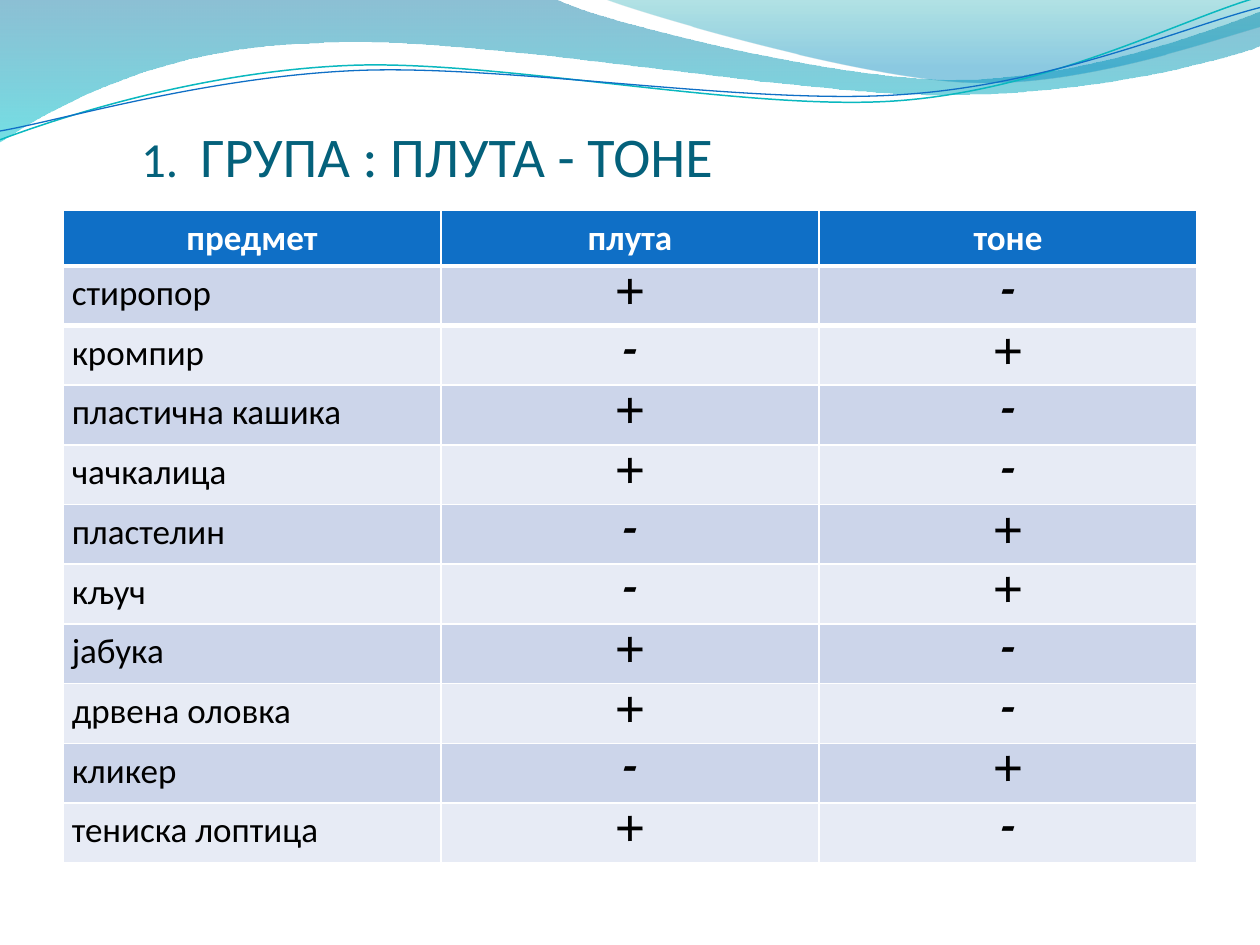
from lxml.etree import Element, SubElement
from pptx import Presentation
from pptx.dml.color import RGBColor
from pptx.enum.text import MSO_ANCHOR, PP_ALIGN
from pptx.oxml.ns import qn
from pptx.util import Inches, Pt

TITLE = [("1.  ", 28), ("ГРУПА : ПЛУТА - ТОНЕ", 32)]
HEAD = ["предмет", "плута", "тоне"]
ITEMS = [
    ("стиропор", "+", "-"),
    ("кромпир", "-", "+"),
    ("пластична кашика", "+", "-"),
    ("чачкалица", "+", "-"),
    ("пластелин", "-", "+"),
    ("кључ", "-", "+"),
    ("јабука", "+", "-"),
    ("дрвена оловка", "+", "-"),
    ("кликер", "-", "+"),
    ("тениска лоптица", "+", "-"),
]
BLUE, WHITE, BANDS = "0F6FC6", "FFFFFF", ("CCD5EA", "E7EBF5")
TOP, BODY = 0.44, 4.74
WAVES = [
    ([(0, 0), (4.4, -0.01), (4.76, 0.17, 6.64, 0.63, 7.58, 0.63),
      (8.53, 0.63, 9.58, 0.26, 10, 0.09), (10.01, 0.36),
      (9.83, 0.44, 8.7, 0.76, 7.46, 0.75), (6.22, 0.75, 3.82, 0.28, 2.57, 0.34),
      (1.29, 0.36, 0.46, 0.83, -0.01, 1.13)],
     [(0, "0074A1", 45), (1, "00C6CF", 55)]),
    ([(4.79, -0.01), (5.09, 0.11, 6.82, 0.62, 7.69, 0.65),
      (8.56, 0.69, 9.61, 0.32, 10, 0.21), (10, 0)],
     [(0, "00A1A9", 30), (0.8, "008BBF", 45)]),
]
LINES = [
    ([(0, 1.11), (0.48, 0.93, 1.58, 0.57, 2.77, 0.52),
      (3.95, 0.47, 5.93, 0.89, 7.13, 0.8), (8.33, 0.71, 9.38, 0.15, 9.98, -0.02)],
     "0AB8BF", 0.85),
    ([(0, 1.04), (0.47, 0.96, 1.64, 0.61, 2.83, 0.56),
      (4.03, 0.51, 5.97, 0.84, 7.17, 0.75), (8.36, 0.67, 9.41, 0.21, 10, 0.06)],
     BLUE, 0.75),
]


def color(code):
    return RGBColor.from_string(code)


def draw(slide, path, close):
    """Add an outline whose six-number parts are cubic curves."""
    ends = [(Inches(part[-2]), Inches(part[-1])) for part in path]
    pen = slide.shapes.build_freeform(*ends[0], scale=1.0)
    pen.add_line_segments(ends[1:], close=close)
    shape = pen.convert_to_shape()
    shape.shadow.inherit = False
    for node, part in zip(list(shape.element.iter(qn("a:lnTo"))), path[1:]):
        if len(part) == 6:
            node.tag = qn("a:cubicBezTo")
            for spot, i in enumerate((0, 2)):
                knot = Element(qn("a:pt"), x=str(Inches(part[i]) - shape.left),
                               y=str(Inches(part[i + 1]) - shape.top))
                node.insert(spot, knot)
    return shape


def add_wave(slide, path, stops):
    """Add a see-through wave with a vertical gradient."""
    wave = draw(slide, path, True)
    wave.line.fill.background()
    wave.fill.gradient()
    wave.fill.gradient_angle = 270
    for stop, (place, code, _) in zip(wave.fill.gradient_stops, stops):
        stop.position = place
        stop.color.rgb = color(code)
    tints = wave.element.spPr.iter(qn("a:srgbClr"))
    for tint, (_, _, alpha) in zip(tints, stops):
        SubElement(tint, qn("a:alpha"), val=str(alpha * 1000))


def add_line(slide, path, code, width):
    """Add a thin curved line."""
    curve = draw(slide, path, False)
    curve.fill.background()
    curve.line.color.rgb = color(code)
    curve.line.width = Pt(width)


def write(para, text, size, code, font="Calibri", bold=False):
    """Add one styled run."""
    run = para.add_run()
    run.text = text
    run.font.name, run.font.size, run.font.bold = font, Pt(size), bold
    run.font.color.rgb = color(code)


def add_title(slide):
    """Add the heading above the table."""
    box = slide.shapes.add_textbox(Inches(0.5), Inches(0.77), Inches(9), Inches(0.73))
    frame = box.text_frame
    frame.word_wrap = True
    frame.vertical_anchor = MSO_ANCHOR.BOTTOM
    frame.margin_left = frame.margin_right = frame.margin_bottom = 0
    para = frame.paragraphs[0]
    para._p.get_or_add_pPr().set("marL", str(Inches(0.62)))
    for text, size in TITLE:
        write(para, text, size, "04617B")


def rule(cell, side, width):
    """Draw a white border on one side of a cell."""
    edge = Element(qn("a:" + side), w=str(Pt(width)))
    SubElement(SubElement(edge, qn("a:solidFill")), qn("a:srgbClr"), val=WHITE)
    cell._tc.get_or_add_tcPr().insert(0, edge)


def add_grid(slide):
    """Add the table of things that float or sink."""
    rows = [HEAD] + ITEMS
    grid = slide.shapes.add_table(len(rows), len(HEAD), Inches(0.5), Inches(1.67),
                                  Inches(9), Inches(TOP + BODY)).table
    for r, row in enumerate(rows):
        grid.rows[r].height = Inches(BODY / len(ITEMS) if r else TOP)
        for c, text in enumerate(row):
            cell = grid.cell(r, c)
            cell.fill.solid()
            cell.fill.fore_color.rgb = color(BANDS[(r - 1) % 2] if r else BLUE)
            if r < 2:
                rule(cell, "lnT" if r else "lnB", 3)
            para = cell.text_frame.paragraphs[0]
            if r == 0 or c > 0:
                para.alignment = PP_ALIGN.CENTER
            if r and c:
                cell.margin_bottom = Inches(0.02)
                write(para, text, 24, "000000", "TeX Gyre Pagella", True)
                continue
            cell.margin_left = cell.margin_right = Inches(0.07)
            cell.margin_top = cell.margin_bottom = 0
            para.line_spacing = 1.15
            write(para, text, 20, "000000" if r else WHITE, bold=r == 0)


def main():
    """Build the slide and save it."""
    deck = Presentation()
    deck.slide_width, deck.slide_height = Inches(10), Inches(7.5)
    slide = deck.slides.add_slide(deck.slide_layouts[6])
    for wave in WAVES:
        add_wave(slide, *wave)
    for line in LINES:
        add_line(slide, *line)
    add_title(slide)
    add_grid(slide)
    deck.save("out.pptx")


if __name__ == "__main__":
    main()
